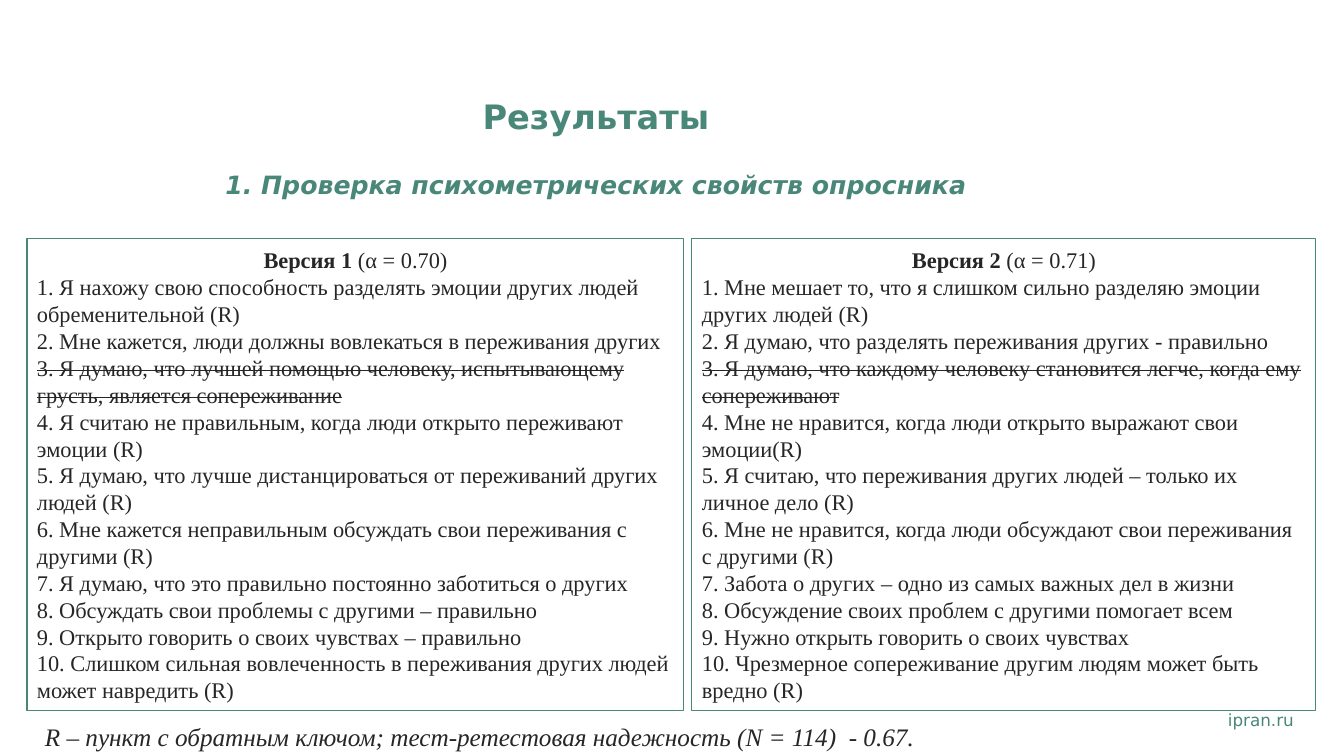
from pptx import Presentation
from pptx import util as u
from pptx.dml.color import RGBColor
from pptx.enum import shapes, text

GREEN, DARK = "498779", "262626"
SANS, SERIF = "DejaVu Sans", "Times New Roman"
CENTER, LEFT = text.PP_ALIGN.CENTER, text.PP_ALIGN.LEFT
TOP, MIDDLE = text.MSO_ANCHOR.TOP, text.MSO_ANCHOR.MIDDLE
STRUCK = 3


def px(n):
    return u.Emu(round(n * 914400 / 100.8))


def color(value):
    return RGBColor.from_string(value)


class Deck:
    def __init__(self, prs):
        self.s = prs.slides.add_slide(prs.slide_layouts[6])

    def apply(self, target, values):
        for name, value in values.items():
            setattr(target, name, value)

    def run(self, p, content, fill, strike=False, **font):
        r = p.add_run()
        r.text = content
        self.apply(r.font, font)
        r.font.color.rgb = color(fill)
        if strike:
            r.font._element.set("strike", "sngStrike")

    def paragraph(self, tf, first=False, **values):
        p = tf.paragraphs[0] if first else tf.add_paragraph()
        self.apply(p, values)
        return p

    def textbox(self, x, y, w, h, wrap=True):
        tf = self.s.shapes.add_textbox(px(x), px(y), px(w), px(h)).text_frame
        self.apply(tf, {"word_wrap": wrap, "vertical_anchor": TOP})
        return tf

    def label(self, x, y, w, h, content, fill, wrap=True, **font):
        p = self.paragraph(self.textbox(x, y, w, h, wrap), True)
        self.run(p, content, fill, **font)

    def heading(self, x, y, w, h, title, subtitle):
        tf = self.textbox(x, y, w, h)
        style = {"alignment": CENTER, "line_spacing": 0.9}
        font = {"name": SANS, "bold": True}
        p = self.paragraph(tf, True, **style)
        self.run(p, title, GREEN, size=u.Pt(24), **font)
        p = self.paragraph(tf, space_before=u.Pt(26), **style)
        self.run(p, subtitle, GREEN, size=u.Pt(18), italic=True, **font)

    def version(self, x, y, w, h, name, alpha, items):
        sp = self.s.shapes.add_shape(
            shapes.MSO_SHAPE.RECTANGLE, px(x), px(y), px(w), px(h))
        sp.shadow.inherit = False
        sp.fill.background()
        sp.line.color.rgb = color(GREEN)
        sp.line.width = u.Pt(0.75)
        tf = sp.text_frame
        self.apply(tf, {"word_wrap": True, "vertical_anchor": MIDDLE})
        font = {"name": SERIF, "size": u.Pt(16)}
        p = self.paragraph(tf, True, alignment=CENTER)
        self.run(p, f"{name} ", DARK, bold=True, **font)
        self.run(p, f"(α = {alpha})", DARK, **font)
        for number, item in enumerate(items, 1):
            p = self.paragraph(tf, alignment=LEFT)
            self.run(p, f"{number}. {item}", DARK, number == STRUCK, **font)


VERSION_1 = [
    "Я нахожу свою способность разделять эмоции других людей обременительной (R)",
    "Мне кажется, люди должны вовлекаться в переживания других",
    "Я думаю, что лучшей помощью человеку, испытывающему грусть, является сопереживание",
    "Я считаю не правильным, когда люди открыто переживают эмоции (R)",
    "Я думаю, что лучше дистанцироваться от переживаний других людей (R)",
    "Мне кажется неправильным обсуждать свои переживания с другими (R)",
    "Я думаю, что это правильно постоянно заботиться о других",
    "Обсуждать свои проблемы с другими – правильно",
    "Открыто говорить о своих чувствах – правильно",
    "Слишком сильная вовлеченность в переживания других людей может навредить (R)",
]
VERSION_2 = [
    "Мне мешает то, что я слишком сильно разделяю эмоции других людей (R)",
    "Я думаю, что разделять переживания других - правильно",
    "Я думаю, что каждому человеку становится легче, когда ему сопереживают",
    "Мне не нравится, когда люди открыто выражают свои эмоции(R)",
    "Я считаю, что переживания других людей – только их личное дело (R)",
    "Мне не нравится, когда люди обсуждают свои переживания с другими (R)",
    "Забота о других – одно из самых важных дел в жизни",
    "Обсуждение своих проблем с другими помогает всем",
    "Нужно открыть говорить о своих чувствах",
    "Чрезмерное сопереживание другим людям может быть вредно (R)",
]


def main():
    prs = Presentation()
    prs.slide_width, prs.slide_height = px(1344), px(756)
    deck = Deck(prs)
    deck.label(1218, 705, 105, 30, "ipran.ru", GREEN, name=SANS, size=u.Pt(12))
    deck.heading(21, 95, 1150, 56, "Результаты",
                 "1. Проверка психометрических свойств опросника")
    deck.version(27, 239, 657, 472, "Версия 1", "0.70", VERSION_1)
    deck.version(692, 239, 624, 472, "Версия 2", "0.71", VERSION_2)
    deck.label(35, 716, 902, 40,
               "R – пункт с обратным ключом; тест-ретестовая надежность (N = 114)  - 0.67.",
               DARK, wrap=False, name=SERIF, size=u.Pt(18), italic=True)
    prs.save("out.pptx")


if __name__ == "__main__":
    main()
